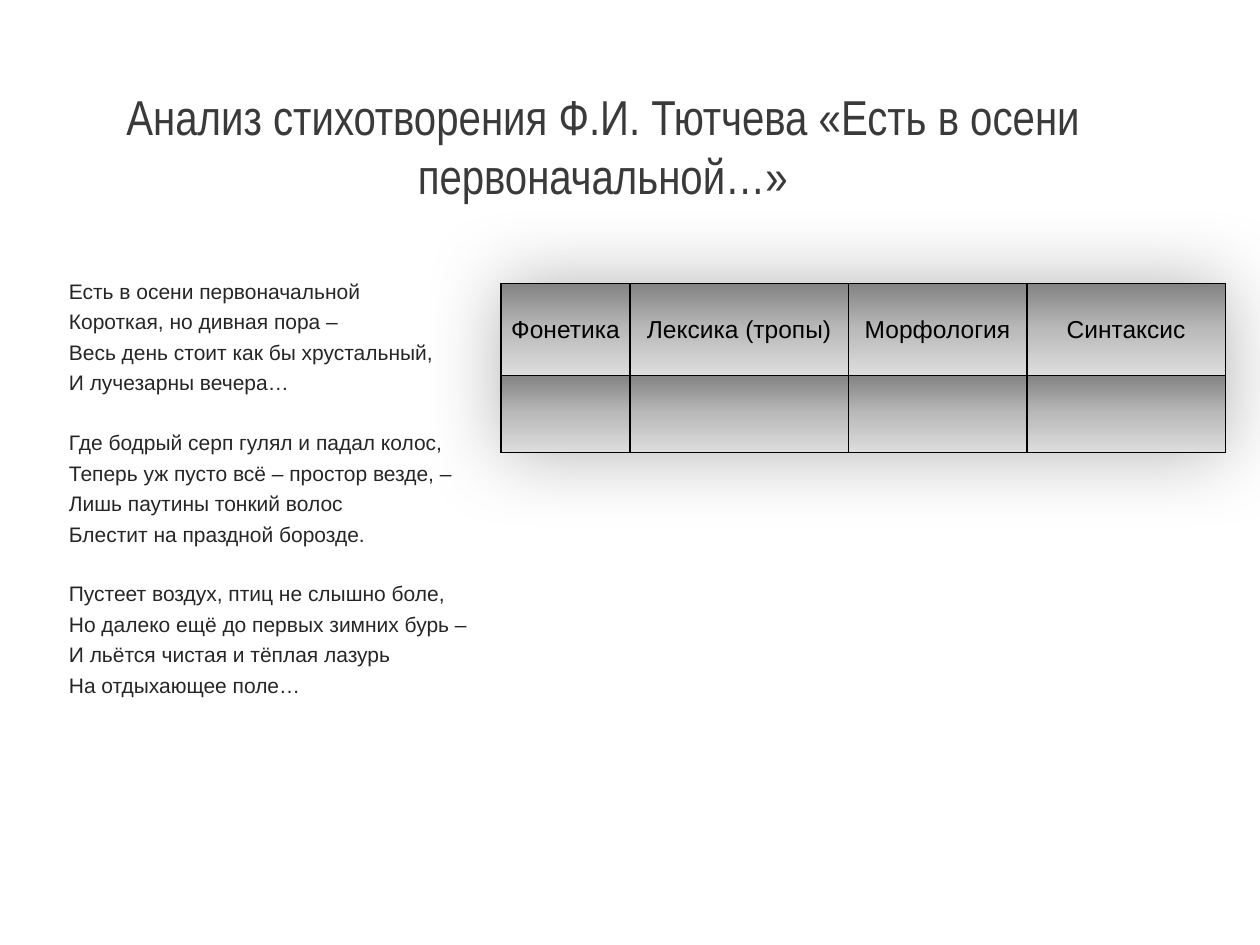
from lxml import etree
from pptx import Presentation
from pptx import util as u
from pptx.dml.color import RGBColor
from pptx.enum import text
from pptx.oxml import ns

COLORS = {"title": "3A3A3A", "poem": "262626", "table": "000000",
          "top": "838383", "middle": "BABABA", "bottom": "DDDDDD"}
TITLE = "Анализ стихотворения Ф.И. Тютчева «Есть в осени первоначальной…»"
STANZAS = [
    ["Есть в осени первоначальной",
     "Короткая, но дивная пора –",
     "Весь день стоит как бы хрустальный,",
     "И лучезарны вечера…"],
    ["Где бодрый серп гулял и падал колос,",
     "Теперь уж пусто всё – простор везде, –",
     "Лишь паутины тонкий волос",
     "Блестит на праздной борозде."],
    ["Пустеет воздух, птиц не слышно боле,",
     "Но далеко ещё до первых зимних бурь –",
     "И льётся чистая и тёплая лазурь",
     "На отдыхающее поле…"],
]
HEADERS = ["Фонетика", "Лексика (тропы)", "Морфология", "Синтаксис"]
COL_SHARES = [2.6, 4.4, 3.6, 4.0]
ROW_SHARES = [1.85, 1.55]


def style(p, size, color, font="Arial"):
    """Format every run of a paragraph."""
    for r in p.runs:
        r.font.size = u.Pt(size)
        r.font.name = font
        r.font.color.rgb = RGBColor.from_string(COLORS[color])


def add_xml(parent, tag, **attrs):
    """Append a DrawingML element and return it."""
    return etree.SubElement(parent, ns.qn("a:" + tag), attrs)


def add_color(parent, color):
    """Append an RGB colour element and return it."""
    return add_xml(parent, "srgbClr", val=COLORS[color])


def add_box(s, box):
    """Add a wrapping text box and return its text frame."""
    tf = s.shapes.add_textbox(*map(u.Cm, box)).text_frame
    tf.word_wrap = True
    return tf


def add_title(s, box):
    """Add the centred heading."""
    tf = add_box(s, box)
    tf.vertical_anchor = text.MSO_ANCHOR.MIDDLE
    tf.text = TITLE
    p = tf.paragraphs[0]
    p.alignment = text.PP_ALIGN.CENTER
    style(p, 28, "title", "Arial Narrow")


def add_poem(s, box):
    """Add the poem with one line per paragraph and a gap between stanzas."""
    tf = add_box(s, box)
    tf.text = "\n".join(line for stanza in STANZAS for line in stanza)
    starts = [len(STANZAS[0]) * i for i in range(1, len(STANZAS))]
    for i, p in enumerate(tf.paragraphs):
        if i:
            p.space_before = u.Pt(19.8 if i in starts else 3)
        style(p, 12, "poem")


def paint_cell(cell):
    """Give a cell black borders and a vertical grey gradient."""
    tcPr = cell._tc.get_or_add_tcPr()
    for side in ("lnL", "lnR", "lnT", "lnB"):
        ln = add_xml(tcPr, side, w=str(u.Pt(1)))
        add_color(add_xml(ln, "solidFill"), "table")
    grad = add_xml(tcPr, "gradFill", rotWithShape="1")
    stops = add_xml(grad, "gsLst")
    for pos, color in ((0, "top"), (50, "middle"), (100, "bottom")):
        add_color(add_xml(stops, "gs", pos=str(pos * 1000)), color)
    add_xml(grad, "lin", ang="5400000", scaled="0")


def add_glow(table):
    """Put a soft shadow around the table."""
    tblPr = table._tbl.tblPr
    effects = add_xml(tblPr, "effectLst")
    tblPr.insert(0, effects)
    shadow = add_xml(effects, "outerShdw", blurRad=str(u.Cm(1.6)), dist="0",
                     dir="0", algn="ctr", rotWithShape="0")
    add_xml(add_color(shadow, "table"), "alpha", val="30000")


def add_analysis(s, box):
    """Add the analysis table with a heading row and an empty row."""
    left, top, width, height = box
    table = s.shapes.add_table(len(ROW_SHARES), len(HEADERS),
                               *map(u.Cm, box)).table
    table.horz_banding = False
    for col, share in zip(table.columns, COL_SHARES):
        col.width = u.Cm(width * share / sum(COL_SHARES))
    for row, share in zip(table.rows, ROW_SHARES):
        row.height = u.Cm(height * share / sum(ROW_SHARES))
    for cell in table.iter_cells():
        cell.margin_left = cell.margin_right = u.Cm(0.18)
        cell.margin_top = cell.margin_bottom = 0
        cell.vertical_anchor = text.MSO_ANCHOR.MIDDLE
        paint_cell(cell)
    for i, header in enumerate(HEADERS):
        cell = table.cell(0, i)
        cell.text = header
        p = cell.text_frame.paragraphs[0]
        p.alignment = text.PP_ALIGN.CENTER
        style(p, 14, "table")
        for r in p.runs:
            r.font.bold = False
    add_glow(table)


def main():
    """Build the slide and save it."""
    prs = Presentation()
    prs.slide_width, prs.slide_height = u.Cm(25.4), u.Cm(19.05)
    s = prs.slides.add_slide(prs.slide_layouts[6])
    add_title(s, (0, 1.35, 24.3, 3.18))
    add_poem(s, (1.14, 5.49, 8.8, 10.6))
    add_analysis(s, (10.1, 5.72, 14.6, 3.4))
    prs.save("out.pptx")


if __name__ == "__main__":
    main()
